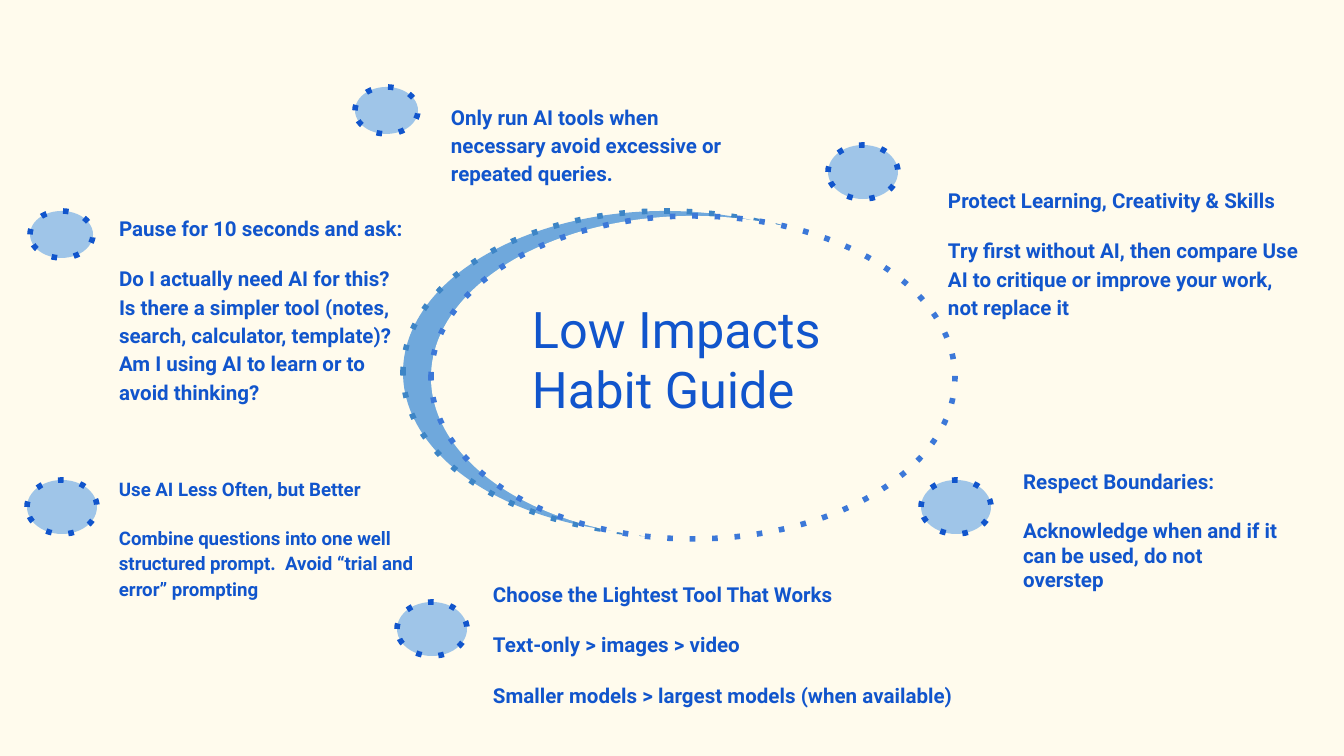
from pptx import Presentation
from pptx.dml.color import RGBColor
from pptx.enum.dml import MSO_LINE
from pptx.enum.shapes import MSO_SHAPE as Shape
from pptx.enum.text import MSO_ANCHOR as Anchor
from pptx.oxml.ns import qn
from pptx.util import Emu, Pt

SCALE = 914400 / 134.4
CREAM, SKY, BLUE = "FFFBED", "9FC5E8", "1155CC"
FONT = "Roboto"
INSET = 13

SMALL, LARGE = (63, 47), (70, 54)
DOTS = [
    (355, 87, SMALL), (30, 211, SMALL), (27, 480, LARGE),
    (828, 145, LARGE), (397, 602, LARGE), (921, 480, LARGE),
]
RING = (524, 323)
RINGS = [
    (403, 211, "6FA8DC", "3D85C6"),
    (431, 216, CREAM, "3C78D8"),
]
TITLE = ((519, 285, 355, 208), 27, False, 1, 0, ["Low Impacts Habit Guide"])
TIPS = [
    ((438, 88, 298, 111), 11, True, 1.15, 12, [
        "Only run AI tools when necessary avoid excessive or repeated queries."]),
    ((106, 199, 313, 120), 11, True, 1.15, 12, [
        "Pause for 10 seconds and ask:",
        "Do I actually need AI for this? Is there a simpler tool (notes, search, "
        "calculator, template)? Am I using AI to learn or to avoid thinking?"]),
    ((106, 462, 332, 142), 10, True, 1.15, 12, [
        "Use AI Less Often, but Better",
        "Combine questions into one well structured prompt.  "
        "Avoid “trial and error” prompting"]),
    ((480, 565, 516, 130), 11, True, 1.15, 12, [
        "Choose the Lightest Tool That Works",
        "Text-only > images > video",
        "Smaller models > largest models (when available)"]),
    ((935, 171, 384, 175), 11, True, 1.15, 12, [
        "Protect Learning, Creativity & Skills",
        "Try first without AI, then compare Use AI to critique or improve "
        "your work, not replace it"]),
    ((1010, 456, 284, 263), 11, True, 1, 13, [
        "Respect Boundaries:",
        "Acknowledge when and if it can be used, do not overstep"]),
]


def px(n):
    return Emu(round(n * SCALE))


def color(code):
    return RGBColor.from_string(code)


def add_oval(slide, box, fill, edge):
    oval = slide.shapes.add_shape(Shape.OVAL, *map(px, box))
    oval.shadow.inherit = False
    oval.fill.solid()
    oval.fill.fore_color.rgb = color(fill)
    oval.line.color.rgb = color(edge)
    oval.line.width = Pt(3)
    oval.line.dash_style = MSO_LINE.ROUND_DOT
    dash = oval._element.spPr.find(qn("a:ln")).find(qn("a:prstDash"))
    dash.set("val", "dot")


def add_text(slide, box, size, bold, lead, gap, lines):
    frame = slide.shapes.add_textbox(*map(px, box)).text_frame
    frame.word_wrap = True
    frame.vertical_anchor = Anchor.TOP
    frame.margin_left = frame.margin_right = px(INSET)
    frame.margin_top = frame.margin_bottom = px(INSET)
    for i, line in enumerate(lines):
        para = frame.add_paragraph() if i else frame.paragraphs[0]
        para.line_spacing = float(lead)
        para.space_before = Pt(gap if i else 0)
        run = para.add_run()
        run.text = line
        run.font.name = FONT
        run.font.size = Pt(size)
        run.font.bold = bold
        run.font.color.rgb = color(BLUE)


def main():
    deck = Presentation()
    deck.slide_width, deck.slide_height = px(1344), px(756)
    slide = deck.slides.add_slide(deck.slide_layouts[6])
    slide.background.fill.solid()
    slide.background.fill.fore_color.rgb = color(CREAM)
    for x, y, size in DOTS:
        add_oval(slide, (x, y, *size), SKY, BLUE)
    for x, y, fill, edge in RINGS:
        add_oval(slide, (x, y, *RING), fill, edge)
    for item in [TITLE, *TIPS]:
        add_text(slide, *item)
    deck.save("out.pptx")


if __name__ == "__main__":
    main()
